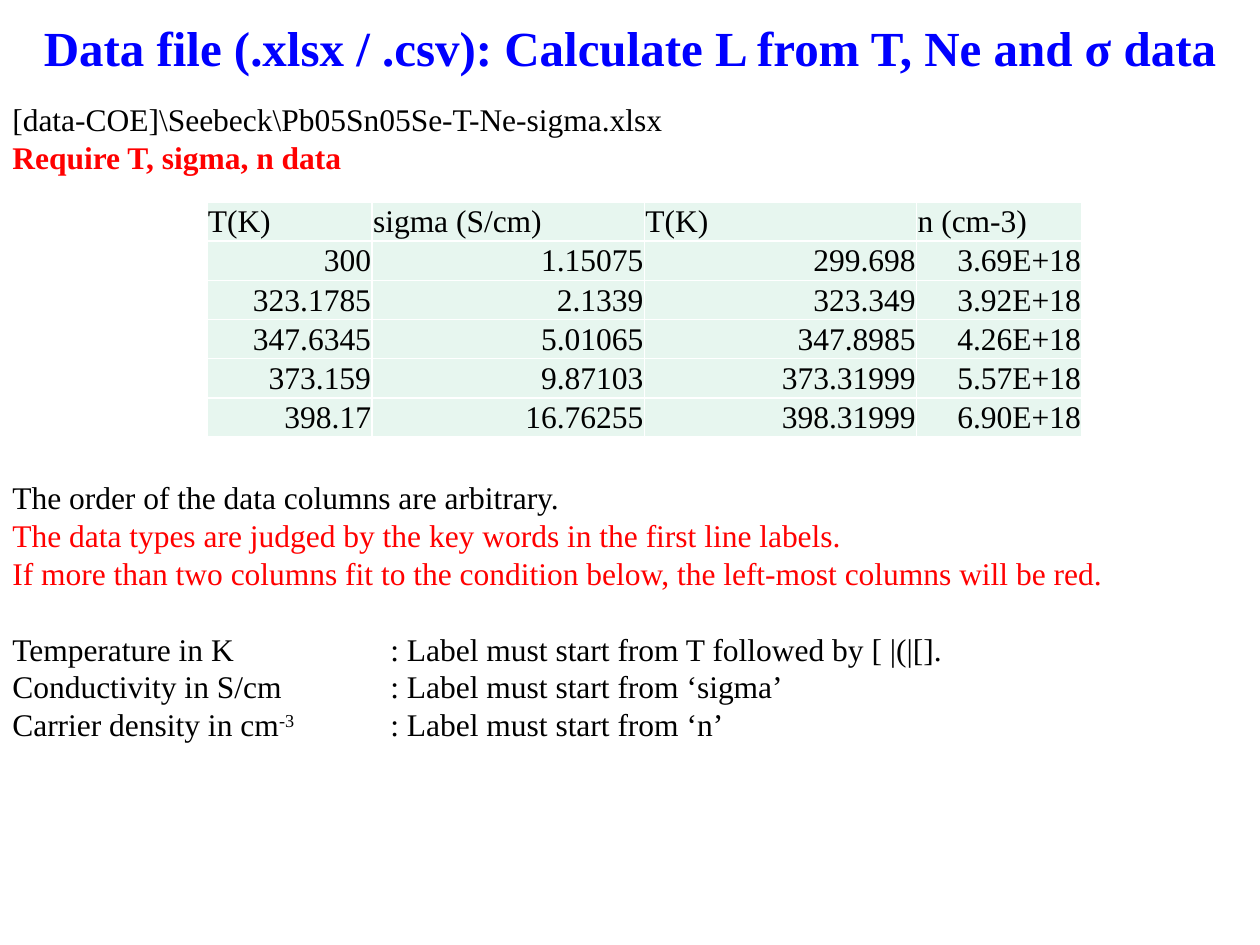
from dataclasses import dataclass

from lxml.etree import SubElement
from pptx import Presentation
from pptx.dml.color import RGBColor as RGB
from pptx.enum.text import MSO_ANCHOR as Anchor, PP_ALIGN as Align
from pptx.oxml.ns import qn
from pptx.util import Cm, Pt


@dataclass(frozen=True)
class Theme:
    font: str = "Times New Roman"
    title_size: float = 28
    body_size: float = 18
    line_pitch: float = 21.6
    title: str = "0000FF"
    body: str = "000000"
    alert: str = "FF0000"
    cell: str = "E7F6EF"
    border: str = "FFFFFF"


class SlideBuilder:
    def __init__(self, deck, theme):
        self.theme = theme
        self.slide = deck.slides.add_slide(deck.slide_layouts[6])

    def run(self, paragraph, words, color, size=None, bold=False, superscript=False):
        run = paragraph.add_run()
        run.text = words
        run.font.name = self.theme.font
        run.font.size = Pt(size or self.theme.body_size)
        run.font.bold = bold
        run.font.color.rgb = RGB.from_string(color)
        if superscript:
            run._r.get_or_add_rPr().set("baseline", "30000")

    def frame(self, left, top, width, height):
        frame = self.slide.shapes.add_textbox(
            Cm(left), Cm(top), Cm(width), Cm(height)).text_frame
        frame.word_wrap = True
        return frame

    def title(self, words, *place):
        frame = self.frame(*place)
        frame.vertical_anchor = Anchor.MIDDLE
        heading = frame.paragraphs[0]
        heading.alignment = Align.CENTER
        self.run(heading, words, self.theme.title, self.theme.title_size, bold=True)

    def body(self, lines, tab, *place):
        frame = self.frame(*place)
        for index, (skipped, color, bold, pieces) in enumerate(lines):
            line = frame.add_paragraph() if index else frame.paragraphs[0]
            line.line_spacing = Pt(self.theme.line_pitch)
            line.space_before = Pt(skipped * self.theme.line_pitch)
            tabs = SubElement(line._p.get_or_add_pPr(), qn("a:tabLst"))
            SubElement(tabs, qn("a:tab"), pos=str(Cm(tab)), algn="l")
            for piece in pieces:
                self.run(line, piece, color, bold=bold, superscript=piece == "-3")

    def table(self, rows, widths, row_height, left, top):
        table = self.slide.shapes.add_table(
            len(rows), len(widths), Cm(left), Cm(top),
            Cm(sum(widths)), Cm(row_height * len(rows))).table
        table.first_row = table.horz_banding = False
        for column, width in zip(table.columns, widths):
            column.width = Cm(width)
        for r, row in enumerate(rows):
            table.rows[r].height = Cm(row_height)
            for c, value in enumerate(row):
                self.cell(table.cell(r, c), value, Align.RIGHT if r else Align.LEFT)

    def cell(self, cell, value, alignment):
        cell.margin_left = cell.margin_right = cell.margin_top = Cm(0.02)
        cell.margin_bottom = Cm(0)
        cell.vertical_anchor = Anchor.MIDDLE
        for side in ("lnL", "lnR", "lnT", "lnB"):
            edge = SubElement(cell._tc.get_or_add_tcPr(), qn(f"a:{side}"), w=str(Pt(1)))
            paint = SubElement(edge, qn("a:solidFill"))
            SubElement(paint, qn("a:srgbClr"), val=self.theme.border)
        cell.fill.solid()
        cell.fill.fore_color.rgb = RGB.from_string(self.theme.cell)
        entry = cell.text_frame.paragraphs[0]
        entry.alignment = alignment
        self.run(entry, value, self.theme.body)


def main():
    deck = Presentation()
    deck.slide_width, deck.slide_height = Cm(25.4), Cm(19.05)
    theme = Theme()
    page = SlideBuilder(deck, theme)

    page.title("Data file (.xlsx / .csv): Calculate L from T, Ne and σ data",
               0, 0, 25.4, 1.9)

    black, red = theme.body, theme.alert
    instructions = [
        (0, black, False, ["[data-COE]\\Seebeck\\Pb05Sn05Se-T-Ne-sigma.xlsx"]),
        (0, red, True, ["Require T, sigma, n data"]),
        (8, black, False, ["The order of the data columns are arbitrary."]),
        (0, red, False, ["The data types are judged by the key words in the first line labels."]),
        (0, red, False, ["If more than two columns fit to the condition below, "
                         "the left-most columns will be red."]),
        (1, black, False, ["Temperature in K\t: Label must start from T followed by [ |(|[]."]),
        (0, black, False, ["Conductivity in S/cm\t: Label must start from ‘sigma’"]),
        (0, black, False, ["Carrier density in cm", "-3", "\t: Label must start from ‘n’"]),
    ]
    page.body(instructions, 7.62, 0, 1.9, 25, 14.1)

    measurements = [
        ("T(K)", "sigma (S/cm)", "T(K)", "n (cm-3)"),
        ("300", "1.15075", "299.698", "3.69E+18"),
        ("323.1785", "2.1339", "323.349", "3.92E+18"),
        ("347.6345", "5.01065", "347.8985", "4.26E+18"),
        ("373.159", "9.87103", "373.31999", "5.57E+18"),
        ("398.17", "16.76255", "398.31999", "6.90E+18"),
    ]
    page.table(measurements, (3.33, 5.49, 5.49, 3.33), 0.79, 4.17, 4.07)

    deck.save("out.pptx")


if __name__ == "__main__":
    main()
